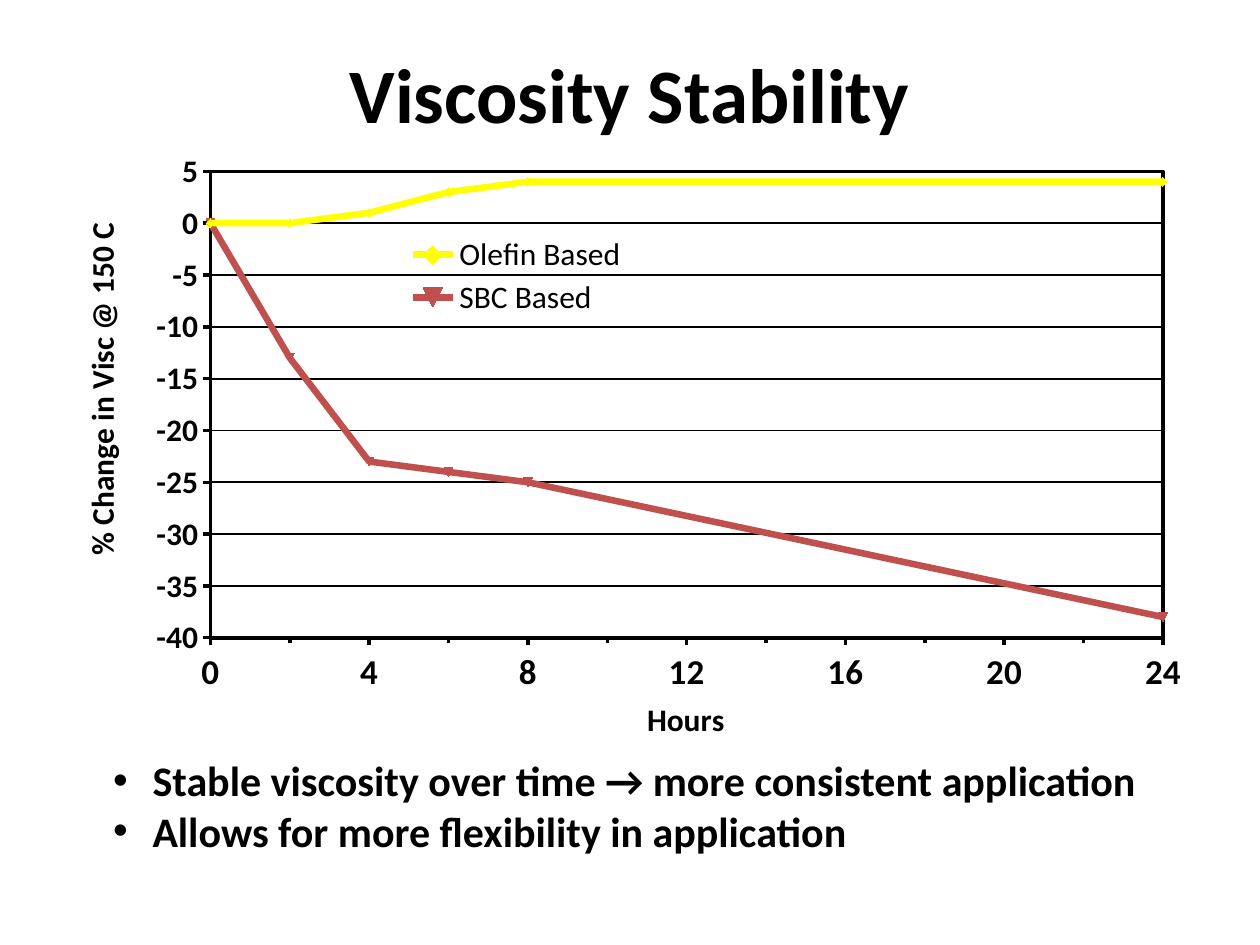
from lxml import etree
from pptx import Presentation
from pptx.chart.data import XyChartData
from pptx.dml.color import RGBColor
from pptx.enum.chart import (XL_AXIS_CROSSES, XL_CHART_TYPE, XL_LEGEND_POSITION,
                             XL_MARKER_STYLE, XL_TICK_LABEL_POSITION, XL_TICK_MARK)
from pptx.enum.text import MSO_ANCHOR, PP_ALIGN
from pptx.oxml import parse_xml
from pptx.oxml.ns import nsdecls, qn
from pptx.util import Pt

XY_LINES = XL_CHART_TYPE.XY_SCATTER_LINES
RIGHT = XL_LEGEND_POSITION.RIGHT
AUTOMATIC = XL_MARKER_STYLE.AUTOMATIC
OUTSIDE = XL_TICK_MARK.OUTSIDE
NO_TICK = XL_TICK_MARK.NONE
LOW = XL_TICK_LABEL_POSITION.LOW
MINIMUM = XL_AXIS_CROSSES.MINIMUM
MIDDLE = MSO_ANCHOR.MIDDLE
CENTER = PP_ALIGN.CENTER

BLACK = RGBColor(0x00, 0x00, 0x00)
YELLOW = RGBColor(0xFF, 0xFF, 0x00)
RED = RGBColor(0xC0, 0x50, 0x4D)
FONT = "Calibri"


def set_font(font, size, bold):
    font.name = FONT
    font.size = Pt(size)
    font.bold = bold
    font.color.rgb = BLACK


def set_layout(parent, index, target=None, **fractions):
    """Place a chart part by fractions of the chart area."""
    for old in parent.findall(qn("c:layout")):
        parent.remove(old)
    values = {"xMode": "edge", "yMode": "edge", **fractions}
    if target:
        values = {"layoutTarget": target, **values}
    items = "".join(f'<c:{name} val="{value}"/>' for name, value in values.items())
    parent.insert(index, parse_xml(
        f'<c:layout {nsdecls("c")}><c:manualLayout>{items}</c:manualLayout></c:layout>'))


presentation = Presentation()
presentation.slide_width = Pt(720)
presentation.slide_height = Pt(540)
slide = presentation.slides.add_slide(presentation.slide_layouts[6])

# Title
title = slide.shapes.add_textbox(Pt(36), Pt(21.6), Pt(648), Pt(62.64))
title_frame = title.text_frame
title_frame.word_wrap = True
title_frame.vertical_anchor = MIDDLE
title_frame.text = "Viscosity Stability"
title_frame.paragraphs[0].alignment = CENTER
set_font(title_frame.paragraphs[0].runs[0].font, 44, True)

# Chart data
hours = [0, 2, 4, 6, 8, 24]
changes = {
    "Olefin Based": [0, 0, 1, 3, 4, 4],
    "SBC Based": [0, -13, -23, -24, -25, -38],
}
chart_data = XyChartData()
for name, values in changes.items():
    data_series = chart_data.add_series(name)
    for hour, value in zip(hours, values):
        data_series.add_data_point(hour, value)
chart = slide.shapes.add_chart(
    XY_LINES, Pt(36), Pt(84.24), Pt(648), Pt(343.44), chart_data).chart
chart.has_title = False
set_font(chart.font, 18, False)
chart.plots[0].vary_by_categories = False

# Series
for series, color in zip(chart.plots[0].series, (YELLOW, RED)):
    series.smooth = False
    series.format.line.color.rgb = color
    series.format.line.width = Pt(3.75)
    series.marker.style = AUTOMATIC
    series.marker.size = 5
    series.marker.format.fill.solid()
    series.marker.format.fill.fore_color.rgb = color
    series.marker.format.line.color.rgb = color

# Axes
hours_axis, change_axis = chart.category_axis, chart.value_axis
axes = [
    (hours_axis, "Hours", 20, 0, 24, 4, {"x": 0.51, "y": 0.91}),
    (change_axis, "% Change in Visc @ 150 C", 18, -40, 5, 5, {"x": 0.01, "y": 0.12}),
]
for axis, caption, size, low, high, step, position in axes:
    axis.minimum_scale, axis.maximum_scale, axis.major_unit = low, high, step
    axis.major_tick_mark = OUTSIDE
    axis.minor_tick_mark = NO_TICK
    axis.tick_label_position = LOW
    axis.tick_labels.number_format = "General"
    axis.tick_labels.number_format_is_linked = False
    set_font(axis.tick_labels.font, size, True)
    axis.format.line.color.rgb = BLACK
    axis.format.line.width = Pt(2)
    axis.has_title = True
    caption_frame = axis.axis_title.text_frame
    caption_frame.text = caption
    set_font(caption_frame.paragraphs[0].runs[0].font, 18, True)
    set_layout(chart.element.xpath(".//c:title")[-1], 1, **position)
hours_axis.has_major_gridlines = False
hours_axis.minor_unit = 2
hours_axis.minor_tick_mark = OUTSIDE
change_axis.crosses = MINIMUM
change_axis.has_major_gridlines = True
change_axis.major_gridlines.format.line.color.rgb = BLACK
change_axis.major_gridlines.format.line.width = Pt(1)

# Plot area with its frame
plot_area = chart.element.xpath(".//c:plotArea")[0]
set_layout(plot_area, 0, "inner", x=0.13, y=0.04, w=0.84, h=0.78)
plot_area.append(parse_xml(
    f'<c:spPr {nsdecls("c", "a")}><a:noFill/><a:ln w="{Pt(2)}"><a:solidFill>'
    f'<a:srgbClr val="{BLACK}"/></a:solidFill></a:ln></c:spPr>'))

# Legend inside the plot
chart.has_legend = True
chart.legend.position = RIGHT
chart.legend.include_in_layout = False
set_font(chart.legend.font, 18, False)
set_layout(chart.element.xpath(".//c:legend")[0], 1, x=0.3, y=0.14, w=0.2, h=0.15)

# Takeaways
takeaways = slide.shapes.add_textbox(Pt(57.6), Pt(427.68), Pt(624.24), Pt(65.52))
takeaways_frame = takeaways.text_frame
takeaways_frame.word_wrap = True
takeaways_frame.text = ("Stable viscosity over time → more consistent application\n"
                        "Allows for more flexibility in application")
for paragraph in takeaways_frame.paragraphs:
    properties = paragraph._p.get_or_add_pPr()
    properties.set("marL", str(Pt(22.5)))
    properties.set("indent", str(-Pt(22.5)))
    etree.SubElement(properties, qn("a:buFont"), typeface="Arial")
    etree.SubElement(properties, qn("a:buChar"), char="•")
    set_font(paragraph.runs[0].font, 24, True)

presentation.save("out.pptx")
